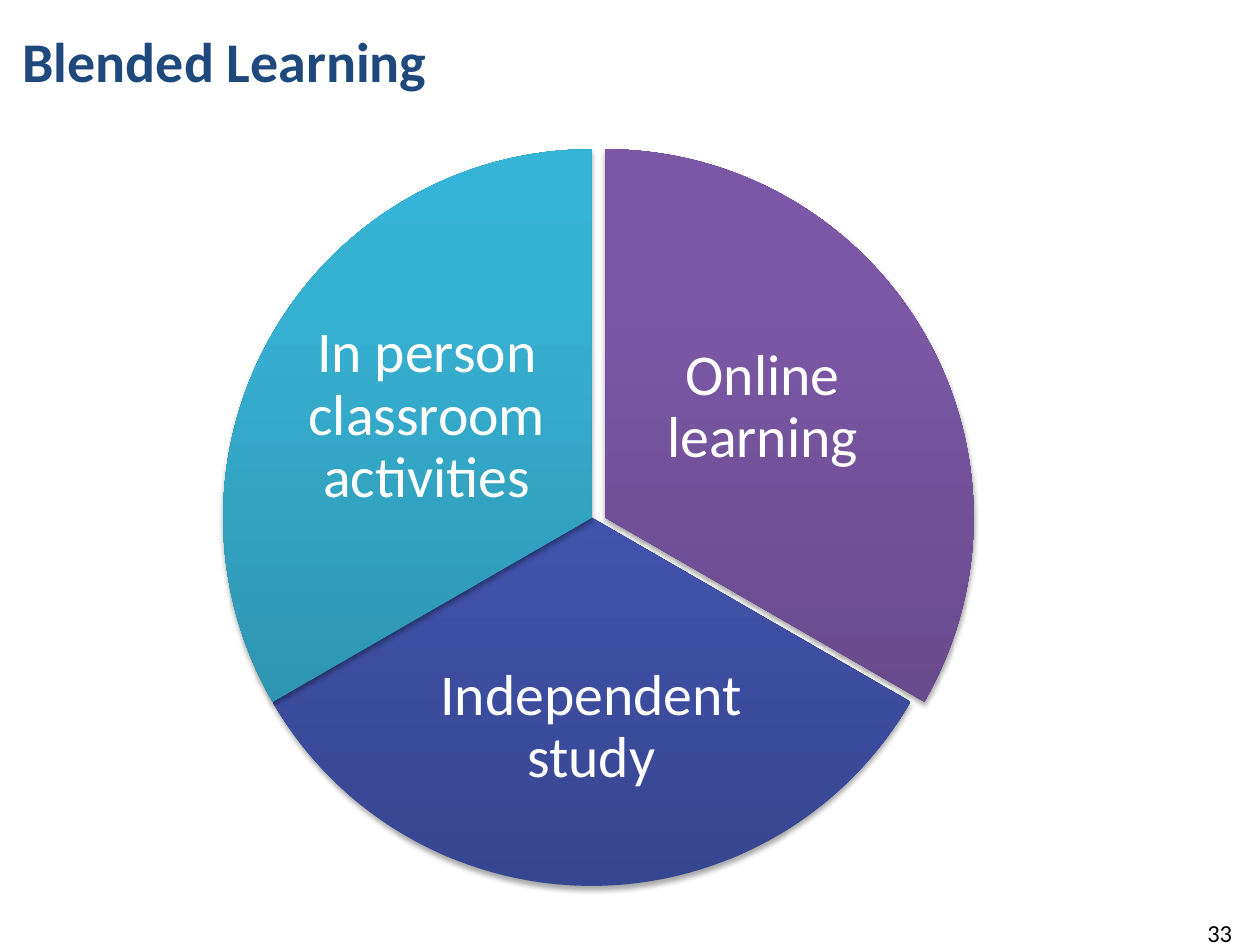
from lxml.etree import SubElement as Sub
from pptx import Presentation
from pptx.dml.color import RGBColor as Rgb
from pptx.enum.shapes import MSO_SHAPE as Shape
from pptx.enum.text import MSO_ANCHOR as Anchor, MSO_AUTO_SIZE as Auto, PP_ALIGN as Align
from pptx.oxml.ns import qn
from pptx.util import Cm, Pt

HUES = {
    "title": "1F497D", "black": "000000", "white": "FFFFFF",
    "online": ("5F4480", "7B58A6", "7C57A8"),
    "study": ("374691", "475BBC", "455ABF"),
    "class": ("2A88A2", "37B1D2", "34B4D6"),
}
STOPS = (0, 80, 100)
SIDE, TOP = 14.85, 3.01
PARTS = [
    ("Online learning", "online", 4.78, (162, 18), (12.8, 5.74, 5.15, 4.95)),
    ("Independent study", "study", 4.5, (18, 90), (8.56, 12.37, 6.72, 4.6)),
    ("In person classroom activities", "class", 4.5, (90, 162), (6.03, 5.92, 5.15, 4.95)),
]


def style(par, size, hue, align, bold=False):
    """Format one paragraph."""
    par.alignment = align
    font = par.font
    font.name, font.size, font.bold = "Calibri", Pt(size), bold
    font.color.rgb = Rgb.from_string(HUES[hue])


def label(shapes, text, box, size, hue, align, inset=None):
    """Add a wrapped, vertically centred text box."""
    frame = shapes.add_textbox(*map(Cm, box)).text_frame
    frame.word_wrap, frame.vertical_anchor = True, Anchor.MIDDLE
    if inset is not None:
        frame.margin_left = frame.margin_right = Cm(inset)
        frame.margin_top = frame.margin_bottom = Cm(inset)
    par = frame.paragraphs[0]
    par.text = text
    style(par, size, hue, align)
    return par


def shade(pie, hues):
    """Fill a slice with an upward gradient."""
    pie.fill.gradient()
    pie.fill.gradient_angle = 90
    stops = pie._element.spPr.find(qn("a:gradFill")).find(qn("a:gsLst"))
    for old in list(stops):
        stops.remove(old)
    for pos, hue in zip(STOPS, hues):
        stop = Sub(stops, qn("a:gs"), pos=str(pos * 1000))
        Sub(stop, qn("a:srgbClr"), val=hue)


def drop(pie):
    """Give a slice a soft shadow below it."""
    pie.shadow.inherit = False
    glow = Sub(pie._element.spPr.find(qn("a:effectLst")), qn("a:outerShdw"),
               blurRad=str(Pt(3.1)), dist=str(Pt(1.8)), dir="5400000", rotWithShape="0")
    tone = Sub(glow, qn("a:srgbClr"), val=HUES["black"])
    Sub(tone, qn("a:alpha"), val="35000")


def slice_pie(shapes, left, turn, hues):
    """Add one third of the circle."""
    pie = shapes.add_shape(Shape.PIE, Cm(left), Cm(TOP), Cm(SIDE), Cm(SIDE))
    pie.adjustments[0], pie.adjustments[1] = turn
    pie.line.fill.background()
    shade(pie, hues)
    drop(pie)


def head(slide, text):
    """Place and format the title."""
    title = slide.shapes.title
    title.left, title.top, title.width, title.height = map(Cm, (0.2, 0.41, 8.74, 1.63))
    frame = title.text_frame
    frame.text = text
    frame.word_wrap, frame.vertical_anchor = False, Anchor.TOP
    frame.auto_size = Auto.SHAPE_TO_FIT_TEXT
    style(frame.paragraphs[0], 32, "title", Align.LEFT, True)


def main():
    """Build the slide and save it."""
    deck = Presentation()
    deck.slide_width, deck.slide_height = Cm(25.4), Cm(19.05)
    slide = deck.slides.add_slide(deck.slide_layouts[5])
    label(slide.shapes, "33", (23.9, 18.49, 1.19, 0.61), 14, "black", Align.RIGHT)
    head(slide, "Blended Learning")
    group = slide.shapes.add_group_shape().shapes
    for text, key, left, turn, box in PARTS:
        slice_pie(group, left, turn, HUES[key])
        par = label(group, text, box, 33, "white", Align.CENTER, 0.12)
        par.line_spacing = 0.9
    deck.save("out.pptx")


if __name__ == "__main__":
    main()
